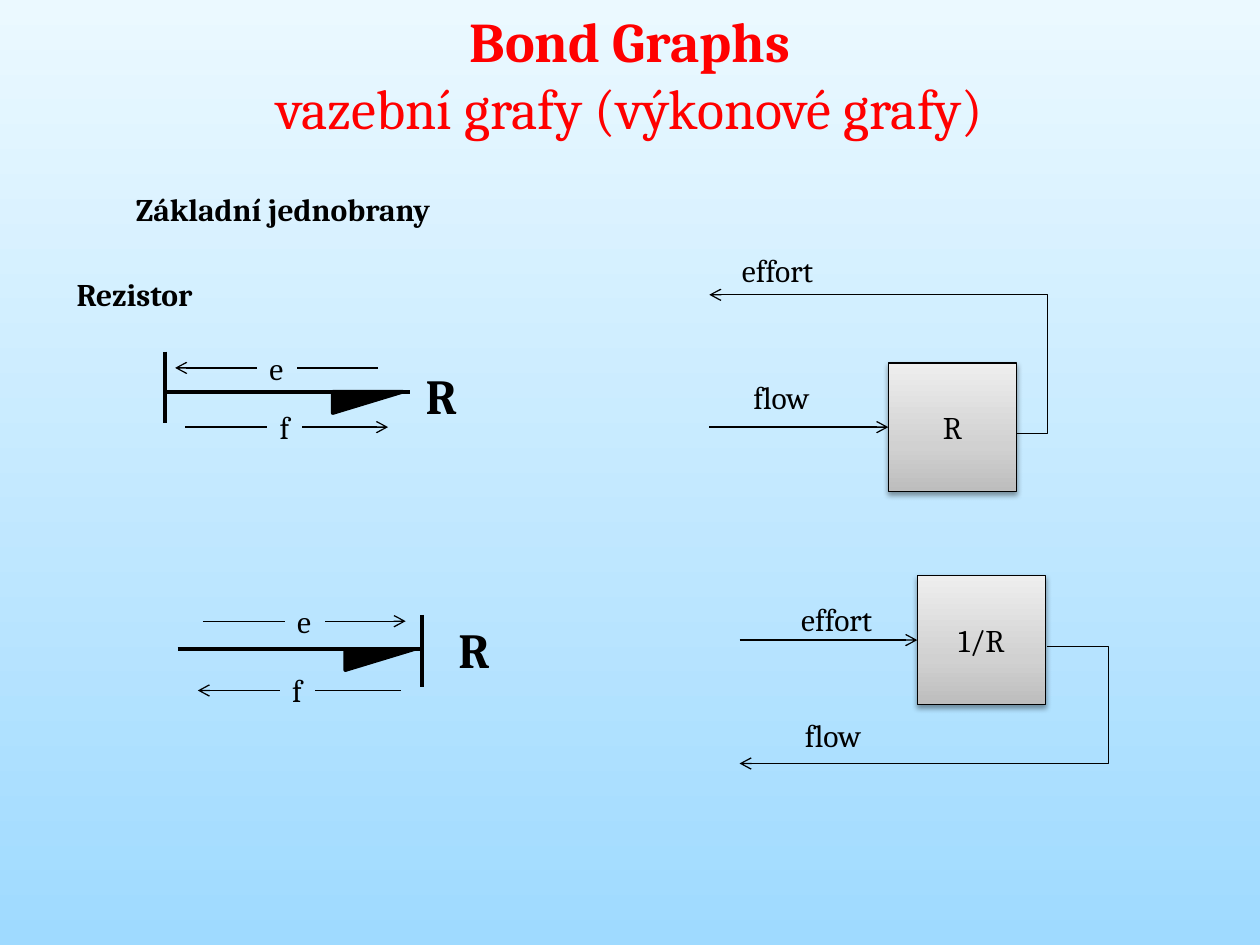
import copy
import dataclasses
import lxml.etree
import pptx
import pptx.dml.color
import pptx.enum.shapes
import pptx.enum.text
import pptx.oxml.ns
import pptx.util

Inches = pptx.util.Inches
Pt = pptx.util.Pt
qn = pptx.oxml.ns.qn
Kind = pptx.enum.shapes.MSO_SHAPE
Link = pptx.enum.shapes.MSO_CONNECTOR
Fit = pptx.enum.text.MSO_AUTO_SIZE
Anchor = pptx.enum.text.MSO_ANCHOR
Align = pptx.enum.text.PP_ALIGN


@dataclasses.dataclass
class Theme:
    font: str = "Cambria"
    ink: str = "000000"
    red: str = "FF0000"
    sky: tuple = ((0, "EBF9FF"), (1, "9FDAFF"))
    steel: tuple = ((0, "BDBDBD"), (0.35, "D1D1D1"), (1, "EEEEEE"))
    head: int = 32
    mark: int = 28
    body: int = 18
    thin: float = 0.75
    thick: float = 2.25
    edge: float = 2


def tint(code):
    return pptx.dml.color.RGBColor.from_string(code)


def sub(node, tag, **attrs):
    return lxml.etree.SubElement(node, qn(tag), attrs)


class Pen:
    def __init__(self, slide, theme):
        self.slide = slide
        self.theme = theme
        self.host = slide.shapes

    def group(self):
        self.host = self.slide.shapes.add_group_shape().shapes

    def root(self):
        self.host = self.slide.shapes

    def run(self, para, text, size=None, bold=False, color=None):
        run = para.add_run()
        run.text = text
        font = run.font
        font.name = self.theme.font
        font.size = Pt(size or self.theme.body)
        font.bold = bold
        font.color.rgb = tint(color or self.theme.ink)

    def shade(self, fill, stops, angle):
        fill.gradient()
        fill.gradient_angle = angle
        for stop, (pos, code) in zip(fill.gradient_stops, stops):
            stop.position = pos
            stop.color.rgb = tint(code)

    def title(self, lines):
        shape = self.slide.shapes.title
        shape.left, shape.top = Inches(0), Inches(0)
        shape.width, shape.height = Inches(10), Inches(1.18)
        frame = shape.text_frame
        frame.auto_size = Fit.NONE
        frame.vertical_anchor = Anchor.TOP
        for i, (text, bold) in enumerate(lines):
            para = frame.add_paragraph() if i else frame.paragraphs[0]
            para.alignment = Align.CENTER
            self.run(para, text, self.theme.head, bold, self.theme.red)

    def label(self, x, y, w, text, h=0.4, size=None, bold=False):
        shape = self.host.add_textbox(Inches(x), Inches(y), Inches(w), Inches(h))
        frame = shape.text_frame
        frame.word_wrap = False
        frame.auto_size = Fit.SHAPE_TO_FIT_TEXT
        self.run(frame.paragraphs[0], text, size, bold)

    def line(self, start, end, width=None, tip=False, bend=None):
        kind = Link.STRAIGHT if bend is None else Link.ELBOW
        wire = self.host.add_connector(kind, *map(Inches, start + end))
        wire.line.width = Pt(width or self.theme.thin)
        wire.line.color.rgb = tint(self.theme.ink)
        props = wire.element.spPr
        if bend is not None:
            guides = props.find(qn("a:prstGeom")).get_or_add_avLst()
            sub(guides, "a:gd", name="adj1", fmla=f"val {round(bend * 100000)}")
        if tip:
            sub(props.find(qn("a:ln")), "a:tailEnd", type="arrow")
        sub(props, "a:effectLst")
        return wire

    def wedge(self, x, y):
        shape = self.host.add_shape(
            Kind.RIGHT_TRIANGLE, Inches(x), Inches(y), Inches(0.56), Inches(0.17))
        shape.shadow.inherit = False
        shape.fill.solid()
        shape.fill.fore_color.rgb = tint(self.theme.ink)
        shape.line.color.rgb = tint(self.theme.ink)
        shape.line.width = Pt(self.theme.edge)
        shape.element.spPr.find(qn("a:xfrm")).set("flipV", "1")

    def box(self, x, y, side, text):
        shape = self.host.add_shape(
            Kind.RECTANGLE, Inches(x), Inches(y), Inches(side), Inches(side))
        shape.fill.gradient()
        stops = shape.element.spPr.find(".//" + qn("a:gsLst"))
        stops.insert(1, copy.deepcopy(stops[0]))
        self.shade(shape.fill, self.theme.steel, 90)
        shape.line.color.rgb = tint(self.theme.ink)
        shape.line.width = Pt(self.theme.thin)
        shape.shadow.inherit = False
        glow = sub(
            shape.element.spPr.find(qn("a:effectLst")), "a:outerShdw",
            blurRad=str(Pt(3.1)), dist=str(Pt(1.6)), dir="5400000", rotWithShape="0")
        sub(sub(glow, "a:srgbClr", val=self.theme.ink), "a:alpha", val="38000")
        frame = shape.text_frame
        frame.vertical_anchor = Anchor.MIDDLE
        para = frame.paragraphs[0]
        para.alignment = Align.CENTER
        self.run(para, text)
        return shape

    def flow(self, x, y, text, w, right):
        self.label(x, y, w, text)
        mid = y + 0.2
        outer, inner = (x - 0.65, mid), (x, mid)
        near, far = (x + w, mid), (x + 0.96, mid)
        if right:
            self.line(outer, inner)
            self.line(near, far, tip=True)
        else:
            self.line(far, near)
            self.line(inner, outer, tip=True)

    def bond(self, x, y, bar, mark, effort, flow, right):
        self.group()
        self.label(*mark, 0.52, "R", 0.57, self.theme.mark, True)
        self.line((x, y), (x + 1.94, y), self.theme.thick)
        self.wedge(x + 1.33, y)
        spot, top = bar
        self.line((spot, top), (spot, top + 0.57), self.theme.thick)
        self.flow(*effort, "e", 0.32, right)
        self.flow(*flow, "f", 0.28, not right)
        self.root()

    def block(self, x, y, text, feed, start, end, bend, flow, effort):
        self.group()
        side = 1.02
        box = self.box(x, y, side, text)
        mid = y + side / 2
        wire = self.line((feed, mid), (x, mid), tip=True)
        wire.end_connect(box, 1)
        self.line(start, end, tip=True, bend=bend)
        self.label(*flow, 0.68, "flow")
        self.label(*effort, 0.82, "effort")
        self.root()


def main():
    deck = pptx.Presentation()
    deck.slide_width, deck.slide_height = Inches(10), Inches(7.5)
    slide = deck.slides.add_slide(deck.slide_layouts[5])
    theme = Theme()
    pen = Pen(slide, theme)
    pen.shade(slide.background.fill, theme.sky, 270)
    pen.title([("Bond Graphs", True), ("vazební grafy (výkonové grafy)", False)])
    pen.label(0.98, 1.46, 2.91, "Základní jednobrany", bold=True)
    pen.label(0.51, 2.13, 1.29, "Rezistor", bold=True)
    pen.bond(1.31, 3.11, bar=(1.31, 2.79), mark=(3.28, 2.85),
             effort=(2.04, 2.72), flow=(2.12, 3.19), right=False)
    pen.bond(1.41, 5.15, bar=(3.35, 4.88), mark=(3.54, 4.87),
             effort=(2.26, 4.73), flow=(2.22, 5.28), right=True)
    pen.block(7.05, 2.88, "R", feed=5.63, start=(8.07, 3.44), end=(5.63, 2.34),
              bend=-0.1, flow=(5.88, 2.95), effort=(5.79, 1.94))
    pen.block(7.28, 4.57, "1/R", feed=5.87, start=(8.31, 5.13), end=(5.87, 6.06),
              bend=-0.2, flow=(6.29, 5.63), effort=(6.26, 4.71))
    deck.save("out.pptx")


if __name__ == "__main__":
    main()
